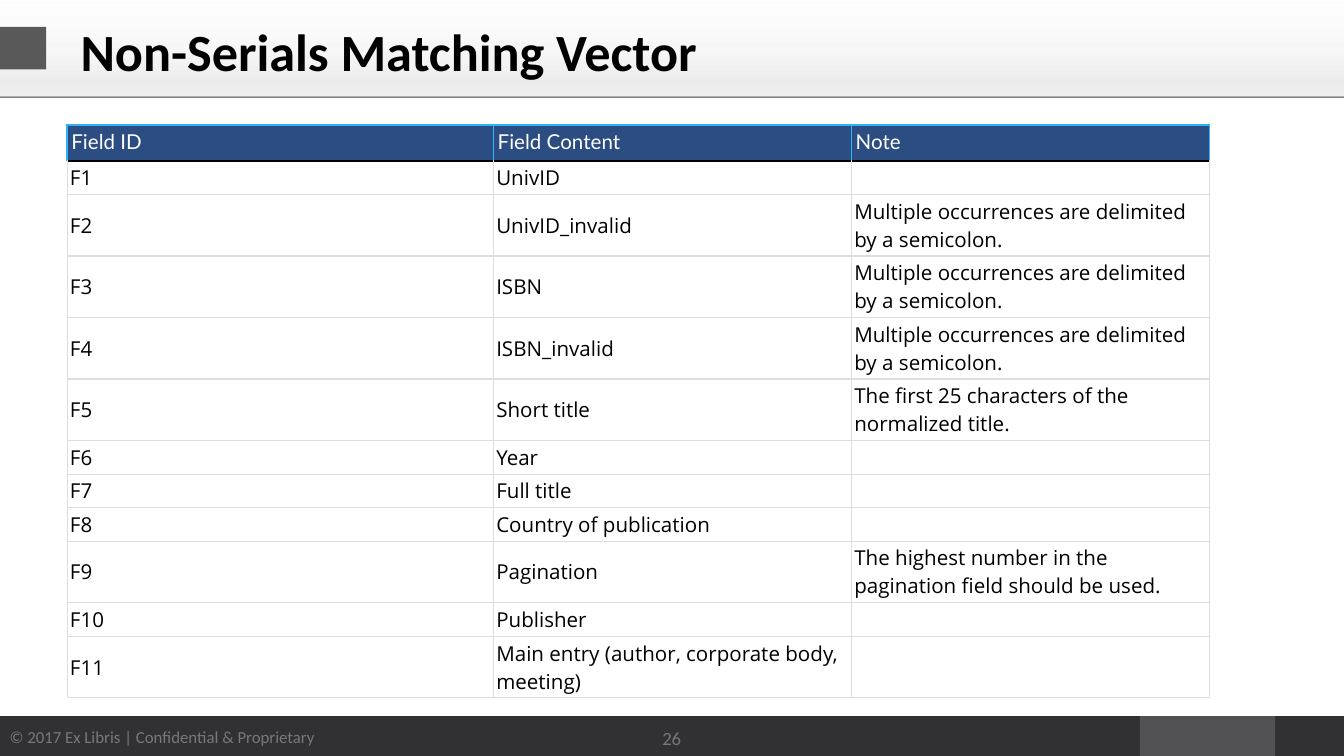
from dataclasses import dataclass

from lxml.etree import SubElement
from pptx import Presentation
from pptx.dml.color import RGBColor
from pptx.enum.shapes import MSO_SHAPE
from pptx.enum.text import MSO_ANCHOR, PP_ALIGN
from pptx.oxml.ns import qn
from pptx.util import Pt


@dataclass(frozen=True)
class Theme:
    heading_font: str = "Calibri"
    header_font: str = "Lato"
    body_font: str = "Open Sans"
    title_size: float = 28
    table_size: float = 11
    number_size: float = 10
    footer_size: float = 9
    black: str = "000000"
    white: str = "FFFFFF"
    footer: str = "313133"
    footer_block: str = "525254"
    footer_text: str = "787878"
    title_block: str = "595959"
    rule: str = "404040"
    header_fill: str = "2C4D82"
    header_border: str = "30B3F6"
    grid: str = "DDDDDD"
    band: tuple = ((0, "FAFAFA", 12), (66, "D7D7D7", 30),
                   (83, "D7D7D7", 47), (100, "E4E4E4", 54))


THEME = Theme()
SEMICOLON_NOTE = "Multiple occurrences are delimited by a semicolon."
HEADER = ("Field ID", "Field Content", "Note")
FIELDS = (
    ("UnivID", ""),
    ("UnivID_invalid", SEMICOLON_NOTE),
    ("ISBN", SEMICOLON_NOTE),
    ("ISBN_invalid", SEMICOLON_NOTE),
    ("Short title", "The first 25 characters of the normalized title."),
    ("Year", ""),
    ("Full title", ""),
    ("Country of publication", ""),
    ("Pagination", "The highest number in the pagination field should be used."),
    ("Publisher", ""),
    ("Main entry (author, corporate body, meeting)", ""),
)
COLUMN_WIDTHS = (228.4, 191.8, 191.8)
HEADER_HEIGHT, SINGLE_LINE, DOUBLE_LINE = 19.2, 17.3, 31.7


def place(item, left, top, width, height):
    item.left, item.top = Pt(left), Pt(top)
    item.width, item.height = Pt(width), Pt(height)


def format_text(paragraph, font_name, size, color, bold=False):
    for run in paragraph.runs:
        run.font.name = font_name
        run.font.size = Pt(size)
        run.font.bold = bold
        run.font.color.rgb = RGBColor.from_string(color)


def add_bar(slide, left, top, width, height, color):
    bar = slide.shapes.add_shape(
        MSO_SHAPE.RECTANGLE, Pt(left), Pt(top), Pt(width), Pt(height))
    bar.shadow.inherit = False
    bar.line.fill.background()
    bar.fill.solid()
    bar.fill.fore_color.rgb = RGBColor.from_string(color)
    return bar


def shade_downward(bar, stops):
    bar.fill.gradient()
    bar.fill.gradient_angle = 270
    stop_list = bar._element.spPr.find(".//" + qn("a:gsLst"))
    for old_stop in list(stop_list):
        stop_list.remove(old_stop)
    for position, color, opacity in stops:
        stop = SubElement(stop_list, qn("a:gs"), pos=str(position * 1000))
        tone = SubElement(stop, qn("a:srgbClr"), val=color)
        SubElement(tone, qn("a:alpha"), val=str(opacity * 1000))


def add_label(slide, text, left, top, width, height, size, wrap, anchor):
    label = slide.shapes.add_textbox(Pt(left), Pt(top), Pt(width), Pt(height))
    frame = label.text_frame
    frame.word_wrap = wrap
    frame.vertical_anchor = anchor
    frame.text = text
    frame.paragraphs[0].alignment = PP_ALIGN.CENTER
    format_text(frame.paragraphs[0], THEME.heading_font, size, THEME.footer_text)


def add_title(slide, text):
    title = slide.shapes.title
    place(title, 36, 4.3, 648, 45.4)
    frame = title.text_frame
    frame.text = text
    frame.vertical_anchor = MSO_ANCHOR.MIDDLE
    frame.paragraphs[0].alignment = PP_ALIGN.LEFT
    format_text(frame.paragraphs[0], THEME.heading_font, THEME.title_size,
                THEME.black, bold=True)
    slide.shapes._spTree.append(title._element)


def set_borders(cell, borders):
    properties = cell._tc.get_or_add_tcPr()
    for side, (color, width) in zip("LRTB", borders):
        edge = SubElement(properties, qn("a:ln" + side), w=str(Pt(width)))
        SubElement(SubElement(edge, qn("a:solidFill")), qn("a:srgbClr"), val=color)


def fill_cell(cell, text, font_name, text_color, fill, inset, anchor, borders):
    set_borders(cell, borders)
    cell.fill.solid()
    cell.fill.fore_color.rgb = RGBColor.from_string(fill)
    cell.margin_left = cell.margin_right = Pt(inset)
    cell.margin_top = cell.margin_bottom = Pt(inset)
    cell.vertical_anchor = anchor
    cell.text_frame.text = text
    paragraph = cell.text_frame.paragraphs[0]
    format_text(paragraph, font_name, THEME.table_size, text_color)
    if not text:
        SubElement(paragraph._p, qn("a:endParaRPr"), sz=str(THEME.table_size * 100))


def add_field_table(slide):
    table = slide.shapes.add_table(
        len(FIELDS) + 1, len(HEADER), Pt(36), Pt(67), Pt(612), Pt(297.4)).table
    table.first_row = table.horz_banding = False
    for column, width in zip(table.columns, COLUMN_WIDTHS):
        column.width = Pt(width)

    accent, grid, divider = (
        (THEME.header_border, 1), (THEME.grid, 0.75), (THEME.black, 0.75))
    table.rows[0].height = Pt(HEADER_HEIGHT)
    for cell, heading in zip(table.rows[0].cells, HEADER):
        fill_cell(cell, heading, THEME.header_font, THEME.white, THEME.header_fill,
                  2.25, MSO_ANCHOR.TOP, (accent, accent, accent, divider))

    for number, (content, note) in enumerate(FIELDS, 1):
        row = table.rows[number]
        row.height = Pt(DOUBLE_LINE if note or len(content) > 40 else SINGLE_LINE)
        top = divider if number == 1 else grid
        for cell, text in zip(row.cells, (f"F{number}", content, note)):
            fill_cell(cell, text, THEME.body_font, THEME.black, THEME.white,
                      1.5, MSO_ANCHOR.MIDDLE, (grid, grid, top, grid))


def main():
    presentation = Presentation()
    presentation.slide_width, presentation.slide_height = Pt(720), Pt(405)
    slide = presentation.slides.add_slide(presentation.slide_layouts[5])

    add_bar(slide, 0, 383.6, 720, 23, THEME.footer)
    add_label(slide, "© 2017 Ex Libris | Confidential & Proprietary",
              -2.9, 386, 179.3, 18, THEME.footer_size, False, MSO_ANCHOR.TOP)
    add_bar(slide, 610.7, 383.6, 72.5, 23, THEME.footer_block)
    title_band = add_bar(slide, -0.5, 0.5, 721, 51.8, THEME.white)
    shade_downward(title_band, THEME.band)
    add_bar(slide, 0, 14.4, 24.8, 22.8, THEME.title_block)
    add_bar(slide, 0, 51.8, 720, 0.6, THEME.rule)
    add_label(slide, "26", 338.6, 381.2, 42.5, 28.8,
              THEME.number_size, True, MSO_ANCHOR.MIDDLE)
    add_title(slide, "Non-Serials Matching Vector")
    add_field_table(slide)

    presentation.save("out.pptx")


if __name__ == "__main__":
    main()
